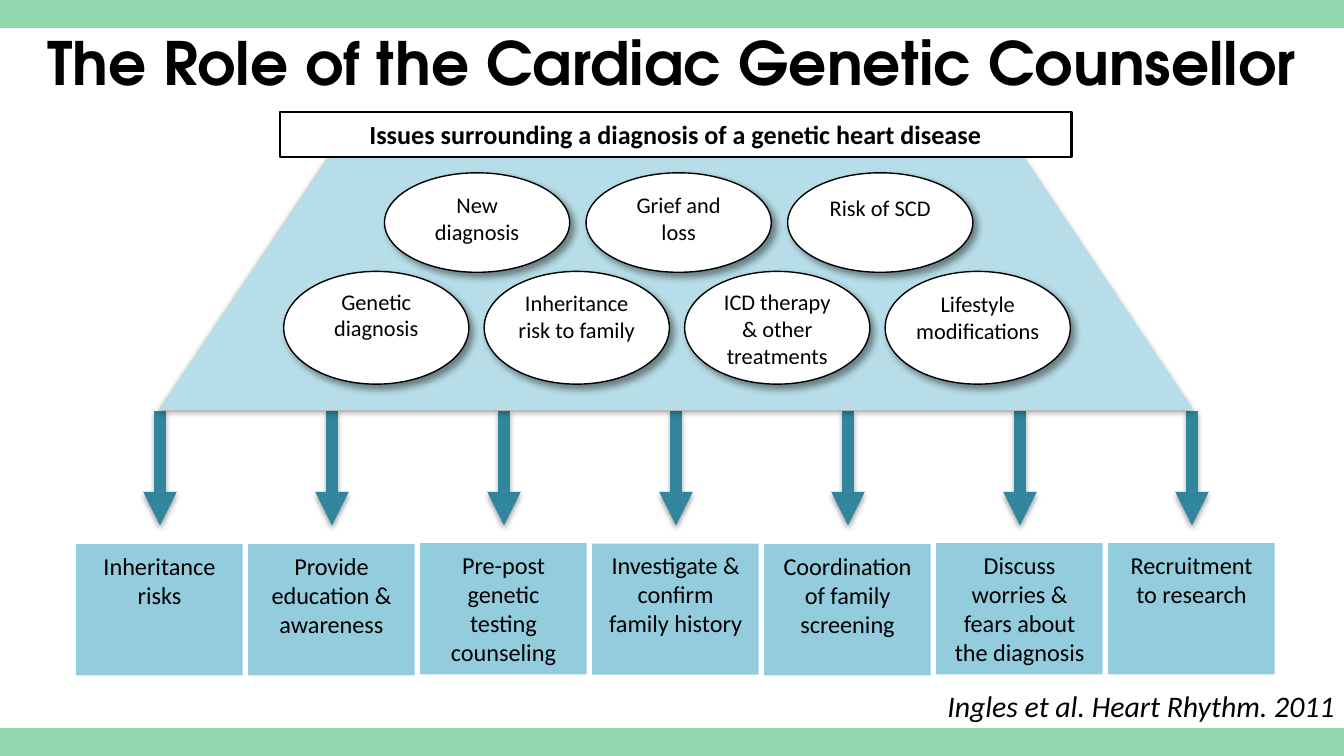
from lxml import etree
from pptx import Presentation
from pptx.dml.color import RGBColor
from pptx.enum.shapes import MSO_CONNECTOR, MSO_SHAPE
from pptx.enum.text import MSO_ANCHOR, PP_ALIGN
from pptx.oxml.ns import qn
from pptx.util import Pt

RECT, OVAL, TRAPEZOID = MSO_SHAPE.RECTANGLE, MSO_SHAPE.OVAL, MSO_SHAPE.TRAPEZOID
STRAIGHT = MSO_CONNECTOR.STRAIGHT
TOP, MIDDLE = MSO_ANCHOR.TOP, MSO_ANCHOR.MIDDLE
LEFT, CENTER = PP_ALIGN.LEFT, PP_ALIGN.CENTER

BLACK = RGBColor(0x00, 0x00, 0x00)
WHITE = RGBColor(0xFF, 0xFF, 0xFF)
GREEN = RGBColor(0x91, 0xD8, 0xAE)
TEAL = RGBColor(0x31, 0x85, 0x9C)
BLUE = RGBColor(0x93, 0xCD, 0xDD)
PALE_BLUE = RGBColor(0xB7, 0xDE, 0xE8)

# Shadows: opacity %, blur pt, distance pt, direction in degrees
ARROW_SHADOW = (38, 3.1, 1.6, 90)
TRAPEZOID_SHADOW = (35, 3.1, 1.8, 90)
OVAL_SHADOW = (43, 4, 3, 45)

WIDTH, HEIGHT = 720, 405


class SlideBuilder:
    body_font = "Calibri"
    title_font = "TeX Gyre Adventor"

    def __init__(self, slide):
        self.slide = slide

    def add_text(self, frame, text, size, font=body_font, align=CENTER,
                 anchor=TOP, wrap=True, bold=False, italic=False):
        frame.word_wrap = wrap
        frame.vertical_anchor = anchor
        paragraph = frame.paragraphs[0]
        paragraph.alignment = align
        run = paragraph.add_run()
        run.text = text
        run.font.name = font
        run.font.size = Pt(size)
        run.font.bold = bold
        run.font.italic = italic
        run.font.color.rgb = BLACK

    def title(self, text, left, top, width, height, size):
        title = self.slide.shapes.title
        title.left, title.top = Pt(left), Pt(top)
        title.width, title.height = Pt(width), Pt(height)
        self.add_text(title.text_frame, text, size, font=self.title_font,
                      anchor=MIDDLE, bold=True)

    def shadow(self, properties, opacity, blur, distance, direction):
        effects = properties.find(qn("a:effectLst"))
        if effects is None:
            effects = etree.SubElement(properties, qn("a:effectLst"))
        outer = etree.SubElement(
            effects, qn("a:outerShdw"), blurRad=str(Pt(blur)),
            dist=str(Pt(distance)), dir=str(direction * 60000),
            rotWithShape="0")
        color = etree.SubElement(outer, qn("a:srgbClr"), val=str(BLACK))
        etree.SubElement(color, qn("a:alpha"), val=str(opacity * 1000))

    def shape(self, kind, left, top, width, height, fill, line=None,
              line_width=0.75, shadow=None):
        shape = self.slide.shapes.add_shape(
            kind, Pt(left), Pt(top), Pt(width), Pt(height))
        shape.fill.solid()
        shape.fill.fore_color.rgb = fill
        if line is None:
            shape.line.fill.background()
        else:
            shape.line.color.rgb = line
            shape.line.width = Pt(line_width)
        shape.shadow.inherit = False
        if shadow:
            self.shadow(shape._element.spPr, *shadow)
        return shape

    def label(self, text, left, top, width, height, size, **style):
        box = self.slide.shapes.add_textbox(
            Pt(left), Pt(top), Pt(width), Pt(height))
        self.add_text(box.text_frame, text, size, **style)

    def down_arrow(self, x, top, bottom):
        arrow = self.slide.shapes.add_connector(
            STRAIGHT, Pt(x), Pt(top), Pt(x), Pt(bottom))
        arrow.line.color.rgb = TEAL
        arrow.line.width = Pt(6)
        properties = arrow._element.spPr
        etree.SubElement(properties.find(qn("a:ln")), qn("a:tailEnd"),
                         type="triangle")
        self.shadow(properties, *ARROW_SHADOW)


def main():
    deck = Presentation()
    deck.slide_width, deck.slide_height = Pt(WIDTH), Pt(HEIGHT)
    builder = SlideBuilder(deck.slides.add_slide(deck.slide_layouts[5]))

    # Green bands at the top and bottom edges
    for band_top in (1.5, 391.7):
        builder.shape(RECT, 0, band_top, WIDTH, 12.2, GREEN, GREEN, 3)

    builder.title("The Role of the Cardiac Genetic Counsellor",
                  0, -2.2, WIDTH, 70.6, 32)

    # Counsellor's roles: an arrow above each box, with the box's top
    roles = [
        ("Inheritance risks", 291.6),
        ("Provide education & awareness", 291.6),
        ("Pre-post genetic testing counseling", 291),
        ("Investigate & confirm family history", 291.2),
        ("Coordination of family screening", 291.6),
        ("Discuss worries & fears about the diagnosis", 291),
        ("Recruitment to research", 291),
    ]
    role_width, role_pitch = 89.2, 92.15
    for column, (role, role_top) in enumerate(roles):
        center = 85.7 + column * role_pitch
        builder.down_arrow(center, 220.3, 281.5)
        role_box = builder.shape(RECT, center - role_width / 2 - 0.3, role_top,
                                 role_width, 70.3, BLUE)
        builder.add_text(role_box.text_frame, role, 13)

    # Citation
    builder.label("Ingles et al. Heart Rhythm. 2011", 500.4, 365, 229, 26.6,
                  16, align=LEFT, wrap=False, italic=True)

    # Trapezoid behind the issues
    trapezoid = builder.shape(TRAPEZOID, 85, 75.6, 554.4, 144, PALE_BLUE,
                              shadow=TRAPEZOID_SHADOW)
    trapezoid.adjustments[0] = 0.67

    # Issues: left, pitch, top and height of a row, then label, width and top
    oval_width = 99.2
    issue_rows = [
        (152, 107.4, 145.4, 60.4, [
            ("Genetic diagnosis", 78.5, 150.6),
            ("Inheritance risk to family", 89.3, 151.2),
            ("ICD therapy & other treatments", 78.5, 151),
            ("Lifestyle modifications", 97.2, 151.8)]),
        (206, 108, 92.6, 53.3, [
            ("New diagnosis", 78.5, 99),
            ("Grief and loss", 78.5, 99),
            ("Risk of SCD", 89.3, 100.6)]),
    ]
    for row_left, pitch, row_top, oval_height, issues in issue_rows:
        for column, (issue, label_width, label_top) in enumerate(issues):
            left = row_left + column * pitch
            builder.shape(OVAL, left, row_top, oval_width, oval_height, WHITE,
                          BLACK, shadow=OVAL_SHADOW)
            builder.label(issue, left + (oval_width - label_width) / 2,
                          label_top, label_width, 36.7, 12)

    # Heading of the issues
    heading = builder.shape(RECT, 150, 60, 424, 24.2, WHITE, BLACK, 1.25)
    builder.add_text(heading.text_frame,
                     "Issues surrounding a diagnosis of a genetic heart disease",
                     14, bold=True)

    deck.save("out.pptx")


if __name__ == "__main__":
    main()
